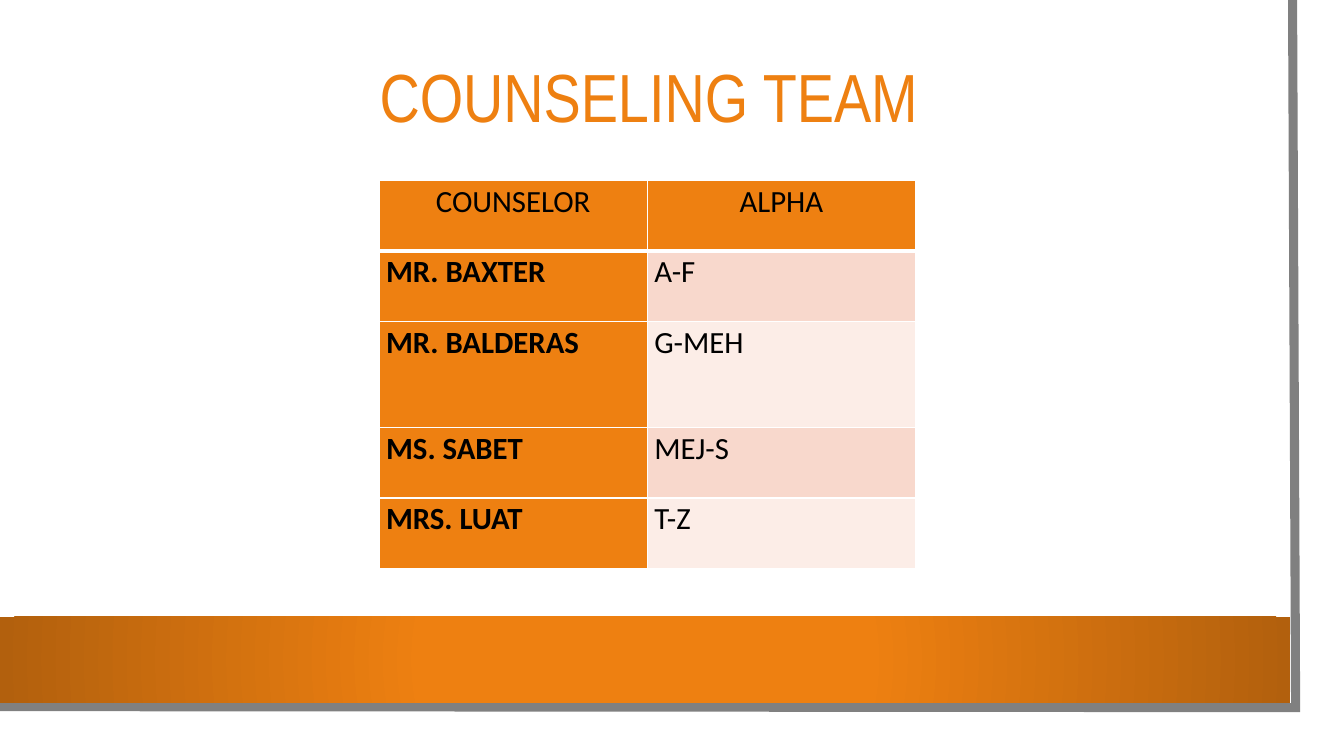
import pptx
import pptx.dml.color
import pptx.enum.dml
import pptx.enum.shapes
import pptx.enum.text
import pptx.oxml
import pptx.oxml.ns
import pptx.util

COLORS = {
    "white": "FFFFFF",
    "black": "000000",
    "orange": "EE8011",
    "dark_orange": "B2600D",
    "gray": "808080",
    "pink": "F8D8CC",
    "pale_pink": "FCEDE7",
}
CENTER = pptx.enum.text.PP_ALIGN.CENTER
LEFT = pptx.enum.text.PP_ALIGN.LEFT
RECTANGLE = pptx.enum.shapes.MSO_SHAPE.RECTANGLE


def px(length):
    """Convert whole px, 100 to the inch, to EMU."""
    return pptx.util.Emu(length * 9144)


def rgb(name):
    return pptx.dml.color.RGBColor.from_string(COLORS[name])


def xml(markup):
    namespace = pptx.oxml.ns.nsdecls("a")
    return pptx.oxml.parse_xml(markup.replace(">", f" {namespace}>", 1))


class SlideBuilder:
    title_font = "Arial Narrow"
    table_font = "Calibri"

    def __init__(self, slide):
        self.slide = slide

    def rectangle(self, left, top, width, height, color):
        shape = self.slide.shapes.add_shape(
            RECTANGLE, px(left), px(top), px(width), px(height))
        shape.shadow.inherit = False
        shape.fill.solid()
        shape.fill.fore_color.rgb = rgb(color)
        shape.line.fill.background()
        return shape

    def radial_band(self, left, top, width, height, stops):
        shape = self.rectangle(left, top, width, height, "orange")
        shape.fill.gradient()
        for stop, (position, color) in zip(shape.fill.gradient_stops, stops):
            stop.position = position
            stop.color.rgb = rgb(color)
        linear = shape._element.spPr.find(".//" + pptx.oxml.ns.qn("a:lin"))
        linear.getparent().replace(linear, xml(
            '<a:path path="circle"><a:fillToRect l="50000" t="50000" '
            'r="50000" b="50000"/></a:path>'))

    def open_path(self, points, color, weight):
        builder = self.slide.shapes.build_freeform(*points[0], scale=px(1))
        builder.add_line_segments(points[1:], close=False)
        shape = builder.convert_to_shape()
        shape.shadow.inherit = False
        shape.fill.background()
        shape.line.color.rgb = rgb(color)
        shape.line.width = pptx.util.Pt(weight)
        shape.line._ln.append(xml('<a:miter lim="800000"></a:miter>'))

    def style(self, paragraph, font, size, color, align, spacing, bold=False):
        paragraph.alignment = align
        paragraph.line_spacing = spacing
        paragraph.font.name = font
        paragraph.font.size = pptx.util.Pt(size)
        paragraph.font.bold = bold
        paragraph.font.color.rgb = rgb(color)

    def title(self, left, top, width, height, text):
        box = self.slide.shapes.add_textbox(
            px(left), px(top), px(width), px(height))
        frame = box.text_frame
        frame.word_wrap = True
        frame.vertical_anchor = pptx.enum.text.MSO_ANCHOR.MIDDLE
        frame.text = text
        self.style(frame.paragraphs[0], self.title_font, 48.6, "orange",
                   CENTER, 0.9)

    def borders(self, cell, **weights):
        for side in "LRTB":
            width = pptx.util.Pt(weights.get(side, 1))
            cell._tc.get_or_add_tcPr().append(xml(
                f'<a:ln{side} w="{width}"><a:solidFill>'
                f'<a:srgbClr val="{COLORS["white"]}"/>'
                f'</a:solidFill></a:ln{side}>'))

    def cell(self, cell, text, fill, align, bold, **weights):
        cell.margin_left = cell.margin_right = px(7)
        cell.margin_top = cell.margin_bottom = 0
        cell.text = text
        self.style(cell.text_frame.paragraphs[0], self.table_font, 22,
                   "black", align, 1.07, bold)
        self.borders(cell, **weights)
        cell.fill.solid()
        cell.fill.fore_color.rgb = rgb(fill)

    def table(self, left, top, column_width, row_heights, rows):
        columns = len(rows[0])
        table = self.slide.shapes.add_table(
            len(rows), columns, px(left), px(top),
            px(column_width * columns), px(sum(row_heights))).table
        table.first_row = table.horz_banding = False
        for column in table.columns:
            column.width = px(column_width)
        for r, (height, texts) in enumerate(zip(row_heights, rows)):
            table.rows[r].height = px(height)
            header = r == 0
            weights = {0: {"B": 3}, 1: {"T": 3}}.get(r, {})
            for c, text in enumerate(texts):
                band = "pink" if r % 2 else "pale_pink"
                fill = "orange" if header or c == 0 else band
                self.cell(table.cell(r, c), text, fill,
                          CENTER if header else LEFT,
                          not header and c == 0, **weights)


def main():
    presentation = pptx.Presentation()
    presentation.slide_width = px(1333)
    presentation.slide_height = px(750)
    builder = SlideBuilder(
        presentation.slides.add_slide(presentation.slide_layouts[6]))

    # Page with its gray edge and orange band
    builder.rectangle(0, 0, 1310, 727, "white")
    builder.open_path([(1282, 0), (1285, 702), (-3, 701)], "gray", 6.5)
    builder.radial_band(0, 612, 1280, 85,
                        [(0.34, "orange"), (1, "dark_orange")])

    # Title
    builder.title(75, 54, 1137, 92, "COUNSELING TEAM")

    # Counselors and their parts of the alphabet
    builder.table(376, 179, 266, [70, 70, 105, 70, 70], [
        ("COUNSELOR", "ALPHA"),
        ("MR. BAXTER", "A-F"),
        ("MR. BALDERAS", "G-MEH"),
        ("MS. SABET", "MEJ-S"),
        ("MRS. LUAT", "T-Z"),
    ])

    presentation.save("out.pptx")


if __name__ == "__main__":
    main()
